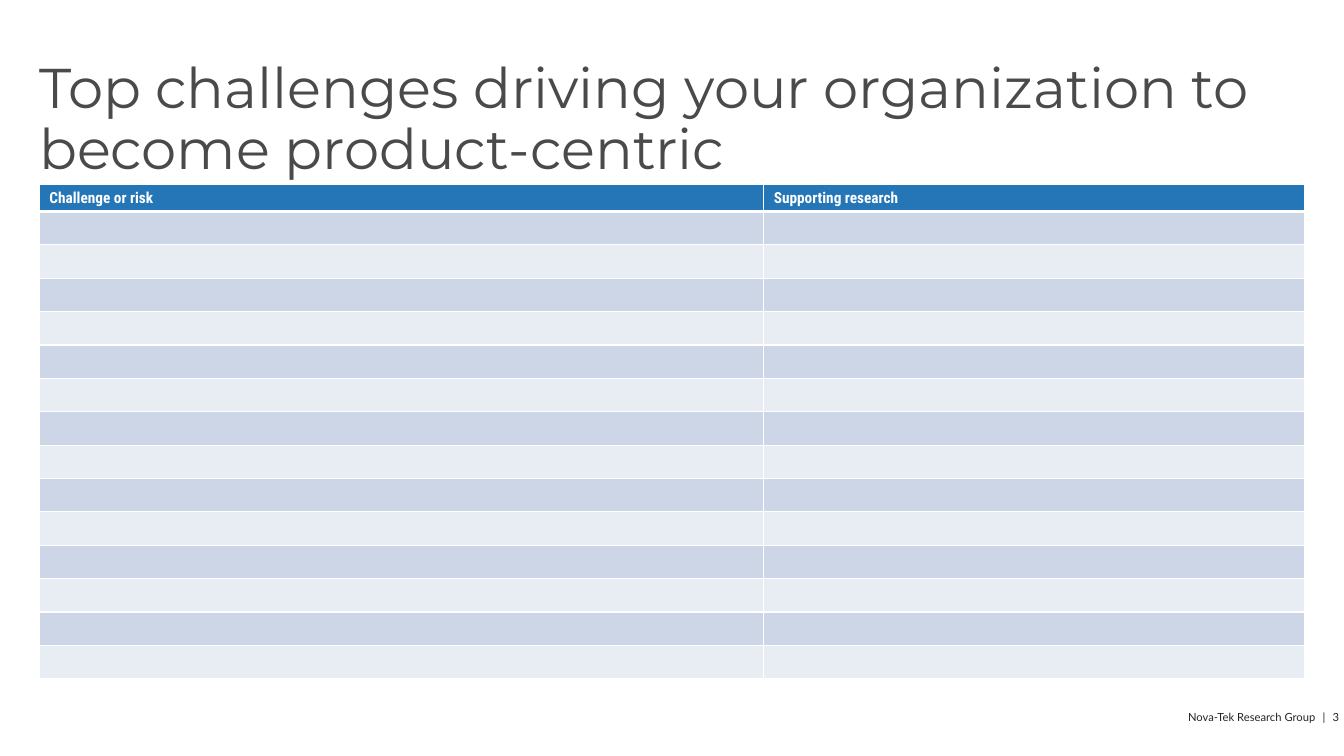
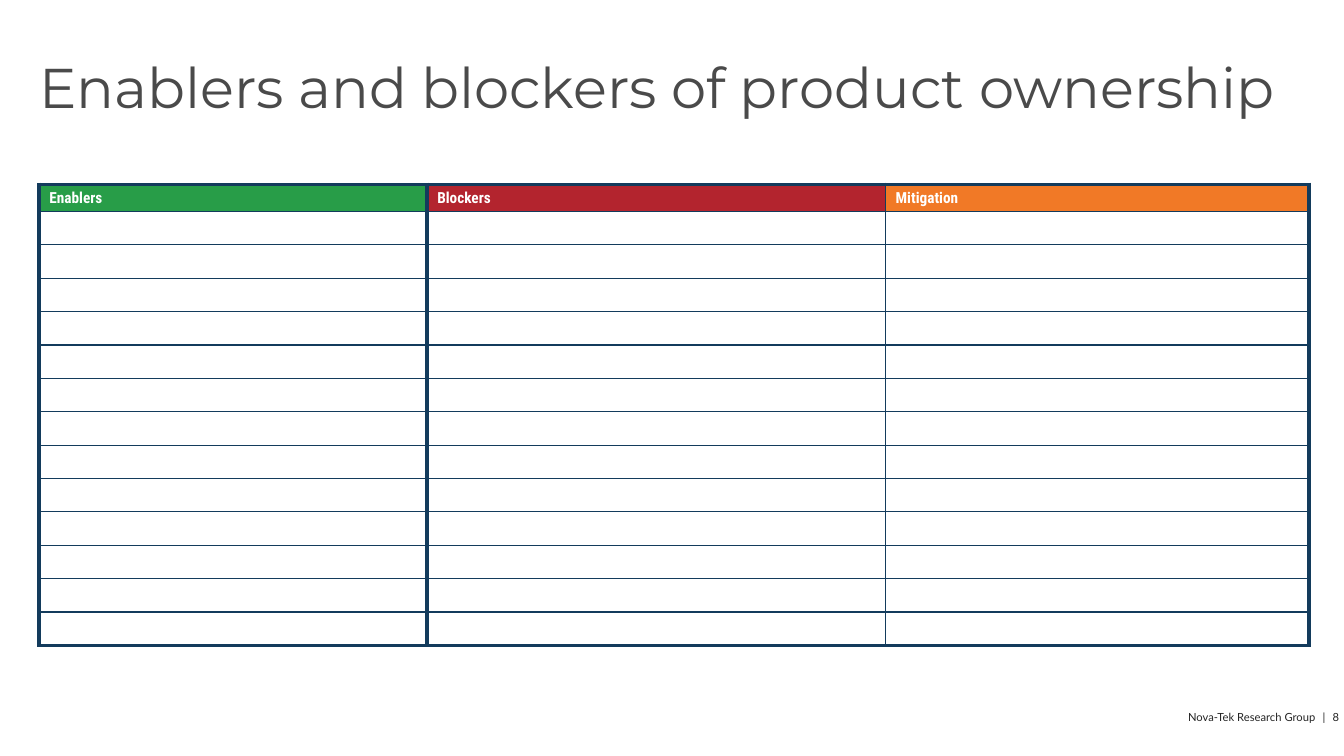
from lxml import etree
from pptx import Presentation
from pptx.dml.color import RGBColor
from pptx.enum import text
from pptx.oxml.ns import qn
from pptx.util import Pt

COLORS = {
    "title": "4A4A4A", "footer": "242424", "white": "FFFFFF",
    "blue": "2576B7", "band_dark": "CDD6E6", "band_light": "E8ECF3",
    "green": "289D48", "red": "B3242E", "orange": "F17926", "navy": "133B5C",
}
LEFT = 28.1
TABLE_TOP = 131.8
HEADER_HEIGHT, ROW_HEIGHT = 19.3, 23.85
CELL_SIZE = 10.9
THIN, THICK = 1, 3


def color(name):
    return RGBColor.from_string(COLORS[name])


class Deck:
    """Holds the shared style and the slide being built."""

    def __init__(self):
        self.file = Presentation()
        self.file.slide_width, self.file.slide_height = Pt(960.5), Pt(540)
        self.page = None

    def add_page(self, title, number):
        self.page = self.file.slides.add_slide(self.file.slide_layouts[6])
        self.add_footer(number)
        self.add_title(title)

    def add_box(self, left, top, width, height, right_inset=0):
        box = self.page.shapes.add_textbox(Pt(left), Pt(top), Pt(width), Pt(height))
        frame = box.text_frame
        frame.word_wrap = True
        frame.margin_left = frame.margin_top = frame.margin_bottom = 0
        frame.margin_right = Pt(right_inset)
        return frame

    def style(self, span, font, size, color_name, bold=False):
        span.font.name, span.font.size, span.font.bold = font, Pt(size), bold
        span.font.color.rgb = color(color_name)

    def add_title(self, title):
        frame = self.add_box(LEFT, 43.2, 907.2, 89.3)
        frame.text = title
        para = frame.paragraphs[0]
        para.line_spacing = 0.9
        self.style(para.runs[0], "Montserrat", 40, "title")

    def add_footer(self, number):
        frame = self.add_box(693.4, 507.6, 270.7, 9.4, right_inset=7.2)
        frame.auto_size = text.MSO_AUTO_SIZE.SHAPE_TO_FIT_TEXT
        para = frame.paragraphs[0]
        para.alignment = text.PP_ALIGN.RIGHT
        for part in ("Nova-Tek Research Group", " ", "|", " ", str(number)):
            span = para.add_run()
            span.text = part
            self.style(span, "Lato", 8, "footer")
            if part == " ":  # widened space around the divider
                span.font._element.set("spc", "300")

    def add_border(self, cell, side, width, color_name):
        line = etree.SubElement(cell._tc.get_or_add_tcPr(), qn("a:ln" + side),
                                w=str(Pt(width)))
        fill = etree.SubElement(line, qn("a:solidFill"))
        etree.SubElement(fill, qn("a:srgbClr"), val=COLORS[color_name])

    def add_table(self, headers, widths, bands, line_color, columns, rows):
        """Draw a header row over empty rows.

        headers pairs each label with its fill; bands are the fills that
        body rows take in turn; columns and rows are grid line widths.
        """
        row_count = len(rows) - 1
        height = HEADER_HEIGHT + (row_count - 1) * ROW_HEIGHT
        table = self.page.shapes.add_table(
            row_count, len(headers), Pt(LEFT), Pt(TABLE_TOP),
            Pt(sum(widths)), Pt(height)).table
        table.horz_banding = False
        for column, width in zip(table.columns, widths):
            column.width = Pt(width)
        for r, row in enumerate(table.rows):
            row.height = Pt(ROW_HEIGHT if r else HEADER_HEIGHT)
            for c, (label, header_fill) in enumerate(headers):
                cell = row.cells[c]
                cell.margin_top = cell.margin_bottom = Pt(3)
                cell.vertical_anchor = text.MSO_ANCHOR.MIDDLE
                for side, width in (("L", columns[c]), ("R", columns[c + 1]),
                                    ("T", rows[r]), ("B", rows[r + 1])):
                    self.add_border(cell, side, width, line_color)
                cell.fill.solid()
                cell.fill.fore_color.rgb = color(
                    bands[(r - 1) % len(bands)] if r else header_fill)
                para = cell.text_frame.paragraphs[0]
                if r:
                    etree.SubElement(para._p, qn("a:endParaRPr"),
                                     sz=str(round(CELL_SIZE * 100)))
                else:
                    para.text = label
                    self.style(para.runs[0], "Roboto Condensed", CELL_SIZE,
                               "white", bold=True)


def main():
    deck = Deck()

    deck.add_page("Top challenges driving your organization to become product-centric", 3)
    deck.add_table(
        headers=[("Challenge or risk", "blue"), ("Supporting research", "blue")],
        widths=[517.7, 386.6], bands=["band_dark", "band_light"], line_color="white",
        columns=[THIN] * 3, rows=[THIN, THICK] + [THIN] * 14)

    deck.add_page("Enablers and blockers of product ownership", 8)
    deck.add_table(
        headers=[("Enablers", "green"), ("Blockers", "red"), ("Mitigation", "orange")],
        widths=[277.2, 327.6, 302.4], bands=["white"], line_color="navy",
        columns=[THICK, THICK, THIN, THICK], rows=[THICK] + [THIN] * 13 + [THICK])

    deck.file.save("out.pptx")


if __name__ == "__main__":
    main()
